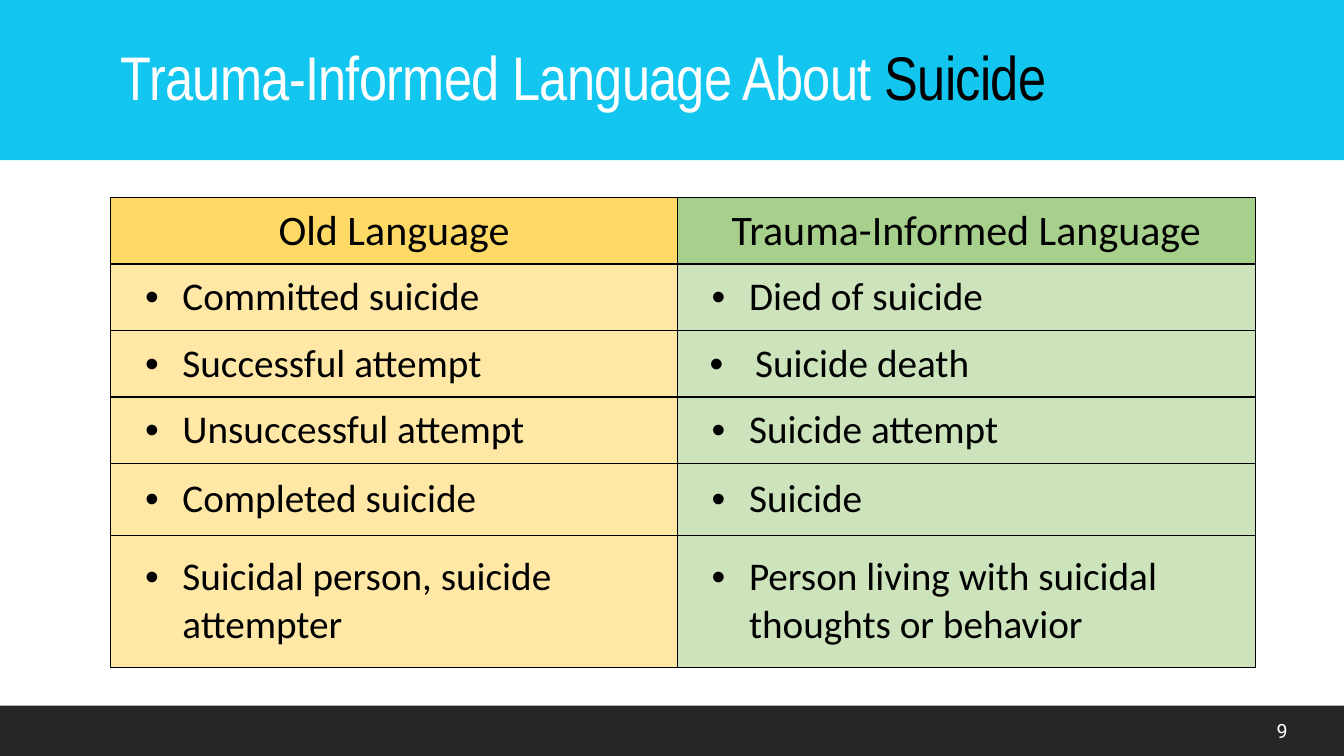
import pptx
import pptx.dml.color
import pptx.enum.shapes
import pptx.enum.text
import pptx.oxml
import pptx.oxml.ns
import pptx.util

WIDTH = pptx.util.Inches(13.33)
HEIGHT = pptx.util.Inches(7.5)
ALIGN = pptx.enum.text.PP_ALIGN
MIDDLE = pptx.enum.text.MSO_ANCHOR.MIDDLE
SPACE = pptx.oxml.ns.nsdecls("a")
HEADS = ("Old Language", "Trauma-Informed Language")
TERMS = (
    ("Committed suicide", "Died of suicide"),
    ("Successful attempt", "Suicide death"),
    ("Unsuccessful attempt", "Suicide attempt"),
    ("Completed suicide", "Suicide"),
    ("Suicidal person, suicide attempter",
     "Person living with suicidal thoughts or behavior"),
)
TINTS = ("FFD966", "A8D08D")
COLS = (42.16, 42.99)
ROWS = (8.8, 8.8, 8.8, 8.8, 9.47, 17.47)
WIDE = "Suicide death"


def across(share):
    """Turn a percentage of the slide's width into a length."""
    return int(WIDTH * share / 100)


def down(share):
    """Turn a percentage of the slide's height into a length."""
    return int(HEIGHT * share / 100)


def frame(left, top, width, height):
    """Return a box given in percentages of the slide."""
    return across(left), down(top), across(width), down(height)


def paint(target, tone):
    """Set a fill or a font to a solid hex colour."""
    if hasattr(target, "solid"):
        target.solid()
        target = target.fore_color
    else:
        target = target.color
    target.rgb = pptx.dml.color.RGBColor.from_string(tone)


def style(para, name, size, tone, align):
    """Format a whole paragraph."""
    para.alignment = align
    para.font.name = name
    para.font.size = pptx.util.Pt(size)
    paint(para.font, tone)


def add_band(slide, top, height, tone):
    """Draw a band over the full width of the slide."""
    kind = pptx.enum.shapes.MSO_SHAPE.RECTANGLE
    band = slide.shapes.add_shape(kind, *frame(0, top, 100, height))
    band.shadow.inherit = False
    paint(band.fill, tone)
    band.line.fill.background()


def set_title(slide, parts):
    """Place the title above the bands and write its coloured parts."""
    title = slide.shapes.title
    title.element.getparent().append(title.element)
    title.left, title.top, title.width, title.height = frame(8.25, 3.2, 85.15, 14.8)
    text = title.text_frame
    text.auto_size = pptx.enum.text.MSO_AUTO_SIZE.NONE
    text.vertical_anchor = MIDDLE
    para = text.paragraphs[0]
    style(para, "Arial Narrow", 44, "FFFFFF", ALIGN.LEFT)
    para.line_spacing = 0.9
    para.space_before = pptx.util.Pt(6)
    for words, tone in parts:
        run = para.add_run()
        run.text = words
        paint(run.font, tone)
        run.font._element.set("spc", "-50")


def add_number(slide, number):
    """Write the slide number in the footer."""
    box = slide.shapes.add_textbox(*frame(90.17, 94, 6.38, 5.33))
    text = box.text_frame
    text.word_wrap = True
    text.vertical_anchor = MIDDLE
    text.text = number
    style(text.paragraphs[0], "Roboto", 14, "FFFFFF", ALIGN.RIGHT)


def add_bullet(para, left, hang):
    """Give a paragraph a hanging bullet, with lengths in inches."""
    props = para._p.get_or_add_pPr()
    props.set("marL", str(pptx.util.Inches(left)))
    props.set("indent", str(-pptx.util.Inches(hang)))
    props.insert(0, pptx.oxml.parse_xml(f'<a:buFont {SPACE} typeface="Arial"/>'))
    props.insert(1, pptx.oxml.parse_xml(f'<a:buChar {SPACE} char="•"/>'))


def add_edges(cell):
    """Draw a thin black border around a cell."""
    props = cell._tc.get_or_add_tcPr()
    for spot, side in enumerate(("lnL", "lnR", "lnT", "lnB")):
        props.insert(spot, pptx.oxml.parse_xml(
            f'<a:{side} {SPACE} w="12700"><a:solidFill>'
            f'<a:srgbClr val="000000"/></a:solidFill></a:{side}>'))


def fade(cell, share):
    """Make a cell's fill partly transparent."""
    tone = cell._tc.tcPr.find(".//" + pptx.oxml.ns.qn("a:srgbClr"))
    tone.append(pptx.oxml.parse_xml(f'<a:alpha {SPACE} val="{share * 1000}"/>'))


def fill_cell(cell, words, tone, head):
    """Write and format one head or term cell."""
    cell.text = words
    cell.vertical_anchor = MIDDLE
    cell.margin_left = cell.margin_right = pptx.util.Inches(0.07)
    cell.margin_top = cell.margin_bottom = 0
    paint(cell.fill, tone)
    para = cell.text_frame.paragraphs[0]
    if head:
        style(para, "Calibri", 30, "000000", ALIGN.CENTER)
    else:
        style(para, "Calibri", 28, "000000", ALIGN.LEFT)
        add_bullet(para, *((0.7, 0.45) if words == WIDE else (0.64, 0.37)))
        fade(cell, 58)
    add_edges(cell)


def add_terms(slide):
    """Build the table that compares old and new terms."""
    lines = (HEADS,) + TERMS
    place = frame(8.25, 26.13, sum(COLS), sum(ROWS))
    table = slide.shapes.add_table(len(ROWS), len(COLS), *place).table
    table.first_row = table.horz_banding = False
    for col, share in zip(table.columns, COLS):
        col.width = across(share)
    for row, share in zip(table.rows, ROWS):
        row.height = down(share)
    for at, (row, line) in enumerate(zip(table.rows, lines)):
        for cell, words, tone in zip(row.cells, line, TINTS):
            fill_cell(cell, words, tone, at == 0)


def main():
    """Build the slide and save it."""
    deck = pptx.Presentation()
    deck.slide_width, deck.slide_height = WIDTH, HEIGHT
    slide = deck.slides.add_slide(deck.slide_layouts[5])
    add_band(slide, 93.33, 6.67, "262626")
    add_band(slide, 0, 21.2, "12C6F0")
    add_number(slide, "9")
    set_title(slide, (("Trauma-Informed Language About ", "FFFFFF"),
                      ("Suicide", "000000")))
    add_terms(slide)
    deck.save("out.pptx")


if __name__ == "__main__":
    main()
